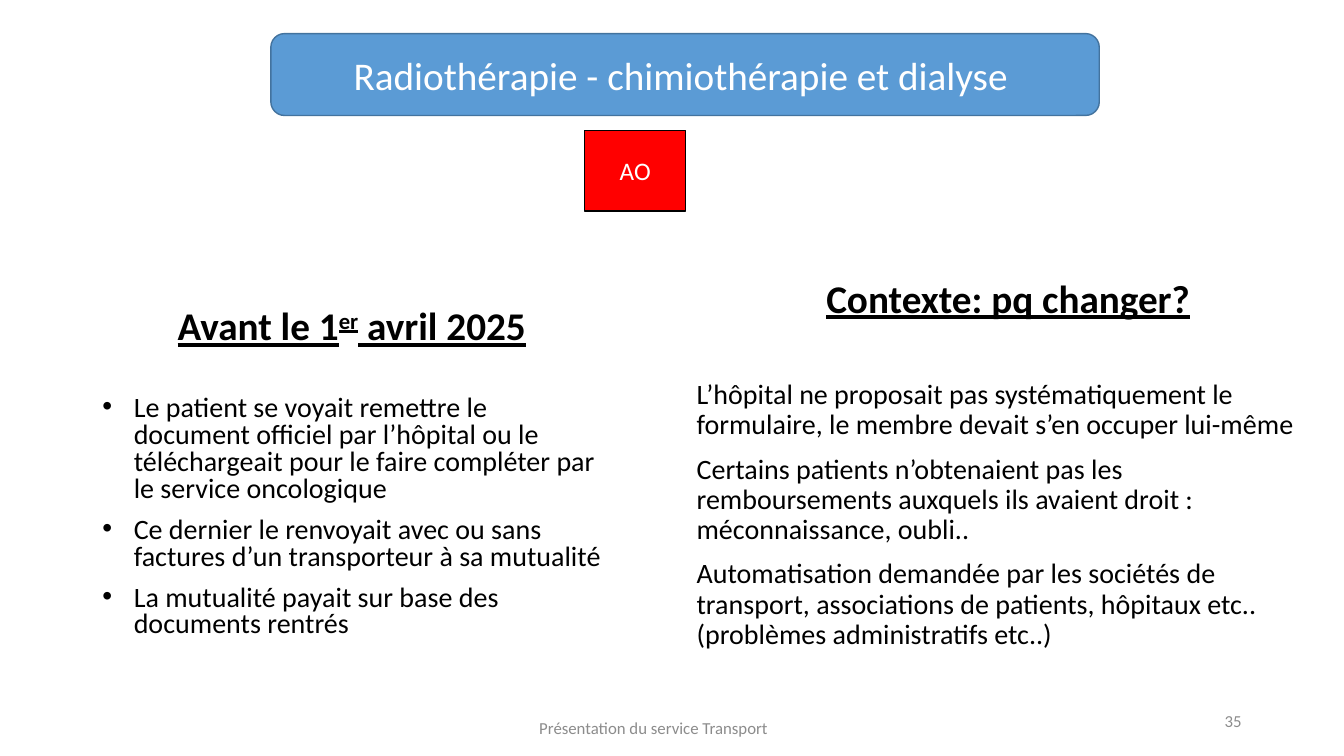
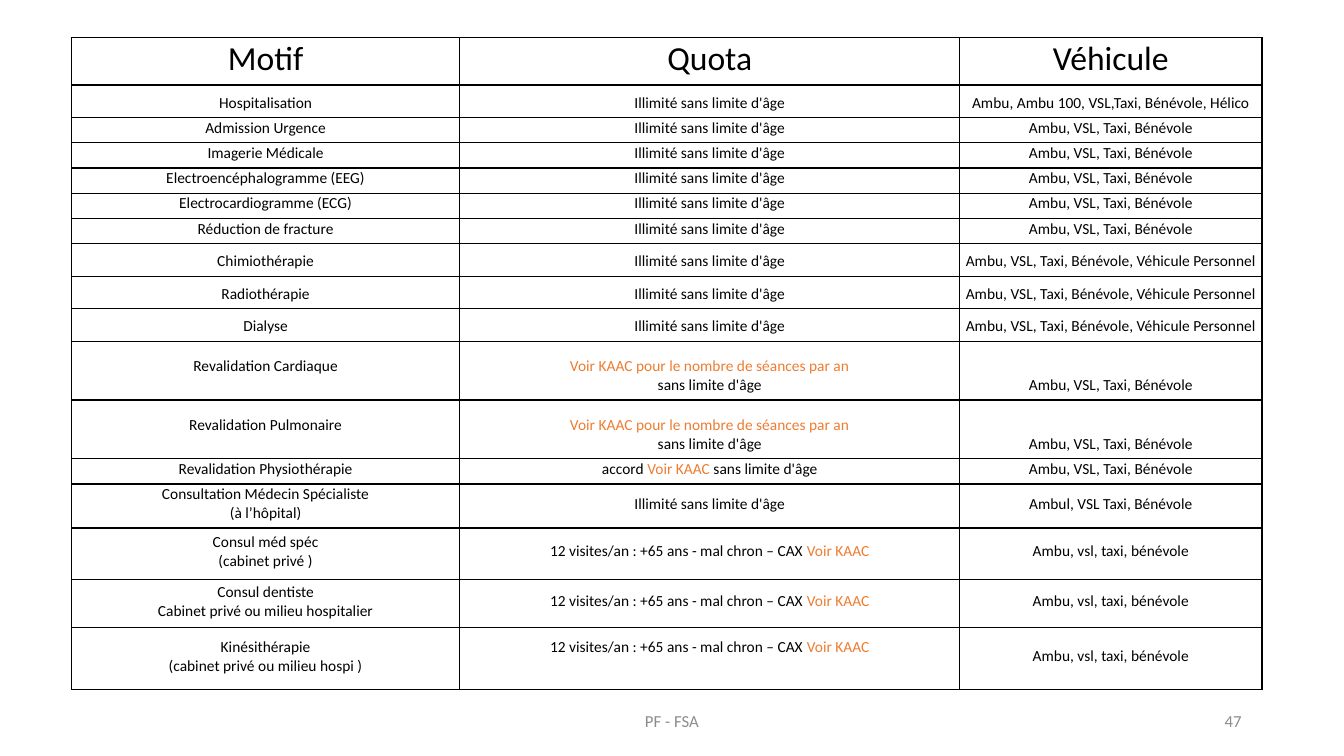
from dataclasses import dataclass
from typing import Sequence

from lxml.etree import SubElement
from pptx import Presentation
from pptx.dml.color import RGBColor
from pptx.enum.shapes import MSO_SHAPE
from pptx.enum.text import MSO_ANCHOR, PP_ALIGN
from pptx.oxml import parse_xml
from pptx.oxml.ns import nsdecls, qn
from pptx.slide import Slide
from pptx.table import _Cell
from pptx.text.text import TextFrame, _Paragraph
from pptx.util import Emu, Pt

EMU_PER_PX = 9525
FONT = "Calibri"
BLACK = "000000"
WHITE = "FFFFFF"
GREY = "8C8C8C"
BLUE = "5B9BD5"
DARK_BLUE = "43739E"
RED = "FF0000"
ORANGE = "ED7D31"
COLUMN_WIDTHS = (370, 476, 288)
CELL_MARGINS = (1, 1, 1, 5)
CELL_LIFT = 18


@dataclass(frozen=True)
class Box:
    """Position and size in px."""
    left: int
    top: int
    width: int
    height: int

    def emu(self) -> tuple[Emu, Emu, Emu, Emu]:
        """Return the four lengths in EMU."""
        return px(self.left), px(self.top), px(self.width), px(self.height)


@dataclass(frozen=True)
class Span:
    """Piece of text with one format."""
    text: str
    color: str = BLACK
    superscript: bool = False


@dataclass(frozen=True)
class Line:
    """Paragraph with its format."""
    spans: tuple[Span, ...]
    size: int
    align: PP_ALIGN = PP_ALIGN.CENTER
    space_before: int = 0
    spacing: float = 1.0
    heading: bool = False
    bullet: bool = False


@dataclass(frozen=True)
class Column:
    """Heading and points of one side of the comparison."""
    box: Box
    top_margin: int
    spacing: float
    heading: tuple[Span, ...]
    heading_gap: int
    bullet: bool
    points: tuple[str, ...]


@dataclass(frozen=True)
class Banner:
    """Filled shape with a centred label."""
    box: Box
    outline: MSO_SHAPE
    fill: str
    border: str
    label: str
    size: int


@dataclass(frozen=True)
class Footer:
    """Footer text and slide number."""
    box: Box
    label: str
    number: str


@dataclass(frozen=True)
class Transport:
    """Table row: a cell is a tuple of lines, a line a tuple of spans."""
    motif: tuple[tuple[Span, ...], ...]
    quota: tuple[tuple[Span, ...], ...]
    vehicles: str
    height: int
    anchor: MSO_ANCHOR = MSO_ANCHOR.BOTTOM
    lifted: tuple[int, ...] = ()
    size: int = 11


def px(length: int) -> Emu:
    """Convert px to EMU."""
    return Emu(length * EMU_PER_PX)


def rgb(color: str) -> RGBColor:
    """Convert a hex string to a colour."""
    return RGBColor.from_string(color)


def add_bullet(paragraph: _Paragraph) -> None:
    """Give a paragraph a hanging round bullet."""
    properties = paragraph._p.get_or_add_pPr()
    properties.set("marL", str(px(30)))
    properties.set("indent", str(px(-30)))
    SubElement(properties, qn("a:buFont")).set("typeface", "Arial")
    SubElement(properties, qn("a:buChar")).set("char", "•")


def write(frame: TextFrame, lines: Sequence[Line]) -> None:
    """Fill a text frame with formatted paragraphs."""
    frame.word_wrap = True
    for index, line in enumerate(lines):
        paragraph = frame.add_paragraph() if index else frame.paragraphs[0]
        if line.bullet:
            add_bullet(paragraph)
        paragraph.alignment = line.align
        paragraph.line_spacing = line.spacing
        paragraph.space_before = Pt(line.space_before)
        for span in line.spans:
            run = paragraph.add_run()
            run.text = span.text
            run.font.name = FONT
            run.font.size = Pt(line.size)
            run.font.color.rgb = rgb(span.color)
            run.font.bold = line.heading
            run.font.underline = line.heading
            if span.superscript:
                run._r.get_or_add_rPr().set("baseline", "30000")


def add_text(slide: Slide, box: Box, lines: Sequence[Line],
             anchor: MSO_ANCHOR = MSO_ANCHOR.MIDDLE) -> TextFrame:
    """Add a text box."""
    frame = slide.shapes.add_textbox(*box.emu()).text_frame
    frame.vertical_anchor = anchor
    write(frame, lines)
    return frame


def add_footer(slide: Slide, footer: Footer) -> None:
    """Add the footer text and the slide number."""
    add_text(slide, footer.box, [Line((Span(footer.label, GREY),), 12)])
    number = Line((Span(footer.number, GREY),), 12, PP_ALIGN.RIGHT)
    add_text(slide, Box(904, 667, 288, 38), [number])


def add_banner(slide: Slide, banner: Banner) -> None:
    """Add a labelled shape."""
    shape = slide.shapes.add_shape(banner.outline, *banner.box.emu())
    shape.shadow.inherit = False
    shape.fill.solid()
    shape.fill.fore_color.rgb = rgb(banner.fill)
    shape.line.color.rgb = rgb(banner.border)
    shape.line.width = Pt(1)
    shape.text_frame.vertical_anchor = MSO_ANCHOR.MIDDLE
    write(shape.text_frame, [Line((Span(banner.label, WHITE),), banner.size)])


def add_column(slide: Slide, column: Column) -> None:
    """Add a heading followed by its points."""
    heading = Line(column.heading, 28, spacing=column.spacing, heading=True)
    points = [
        Line((Span(point),), 20, PP_ALIGN.LEFT, 10 if index else column.heading_gap,
             column.spacing, bullet=column.bullet)
        for index, point in enumerate(column.points)
    ]
    frame = add_text(slide, column.box, [heading, *points], MSO_ANCHOR.TOP)
    frame.margin_top = px(column.top_margin)


def add_borders(cell: _Cell) -> None:
    """Draw a thin black line on each side of a cell."""
    properties = cell._tc.get_or_add_tcPr()
    for position, side in enumerate(("lnL", "lnR", "lnT", "lnB")):
        properties.insert(position, parse_xml(
            f'<a:{side} {nsdecls("a")} w="{Pt(1)}"><a:solidFill>'
            f'<a:srgbClr val="{BLACK}"/></a:solidFill></a:{side}>'))


def add_transport_table(slide: Slide, transports: Sequence[Transport]) -> None:
    """Add the table of quotas and vehicles."""
    box = Box(68, 36, sum(COLUMN_WIDTHS), sum(item.height for item in transports))
    table = slide.shapes.add_table(
        len(transports), len(COLUMN_WIDTHS), *box.emu()).table
    table.first_row = False
    table.horz_banding = False
    for column, width in zip(table.columns, COLUMN_WIDTHS):
        column.width = px(width)
    for row, item in zip(table.rows, transports):
        row.height = px(item.height)
        contents = (item.motif, item.quota, plain(item.vehicles))
        for index, (cell, content) in enumerate(zip(row.cells, contents)):
            left, top, right, bottom = CELL_MARGINS
            cell.margin_left, cell.margin_top = px(left), px(top)
            cell.margin_right = px(right)
            cell.margin_bottom = px(bottom + CELL_LIFT * (index in item.lifted))
            cell.vertical_anchor = item.anchor
            cell.fill.background()
            add_borders(cell)
            write(cell.text_frame, [Line(spans, item.size) for spans in content])


def plain(*texts: str) -> tuple[tuple[Span, ...], ...]:
    """Make one black line of each text."""
    return tuple((Span(text),) for text in texts)


UNLIMITED = plain("Illimité sans limite d'âge")
SESSIONS = ((Span("Voir KAAC pour le nombre de séances par an", ORANGE),),
            (Span("sans limite d'âge"),))
AGREEMENT = ((Span("accord "), Span("Voir KAAC ", ORANGE),
              Span("sans limite d'âge")),)
VISITS = ((Span("12 visites/an : +65 ans - mal chron – CAX "),
           Span("Voir KAAC", ORANGE)),)
USUAL = "Ambu, VSL, Taxi, Bénévole"
WITH_OWN_CAR = f"{USUAL}, Véhicule Personnel"
PRIVATE = "Ambu, vsl, taxi, bénévole"
MIDDLE = MSO_ANCHOR.MIDDLE

TRANSPORTS = (
    Transport(plain("Motif"), plain("Quota"), "Véhicule", 45, size=24),
    Transport(plain("Hospitalisation"), UNLIMITED,
              "Ambu, Ambu 100, VSL,Taxi, Bénévole, Hélico", 31),
    Transport(plain("Admission Urgence"), UNLIMITED, USUAL, 24, MIDDLE),
    *(Transport(plain(motif), UNLIMITED, USUAL, 24) for motif in (
        "Imagerie Médicale", "Electroencéphalogramme (EEG)",
        "Electrocardiogramme (ECG)", "Réduction de fracture")),
    *(Transport(plain(motif), UNLIMITED, WITH_OWN_CAR, 31) for motif in (
        "Chimiothérapie", "Radiothérapie", "Dialyse")),
    *(Transport(plain(motif), SESSIONS, USUAL, 56, lifted=(0,)) for motif in (
        "Revalidation Cardiaque", "Revalidation Pulmonaire")),
    Transport(plain("Revalidation Physiothérapie"), AGREEMENT, USUAL, 24),
    Transport(plain("Consultation Médecin Spécialiste", "(à l’hôpital)"),
              UNLIMITED, "Ambul, VSL Taxi, Bénévole", 42, MIDDLE),
    Transport(plain("Consul méd spéc", "(cabinet privé )"),
              VISITS, PRIVATE, 49, MIDDLE),
    Transport(plain("Consul dentiste", "Cabinet privé ou milieu hospitalier"),
              VISITS, PRIVATE, 46, MIDDLE),
    Transport(plain("Kinésithérapie", "(cabinet privé ou milieu hospi )"),
              VISITS, PRIVATE, 59, MIDDLE, lifted=(1,)),
)

BANNERS = (
    Banner(Box(258, 32, 789, 78), MSO_SHAPE.ROUNDED_RECTANGLE, BLUE, DARK_BLUE,
           "Radiothérapie - chimiothérapie et dialyse ", 28),
    Banner(Box(557, 124, 96, 77), MSO_SHAPE.RECTANGLE, RED, BLACK, "AO", 18),
)

COLUMNS = (
    Column(Box(88, 242, 494, 382), 54, 0.8,
           (Span("Avant le 1"), Span("er", superscript=True), Span(" avril 2025")),
           34, True, (
               "Le patient se voyait remettre le document officiel par l’hôpital ou "
               "le téléchargeait pour le faire compléter par le service oncologique",
               "Ce dernier le renvoyait avec ou sans factures d’un transporteur à "
               "sa mutualité",
               "La mutualité payait sur base des documents rentrés")),
    Column(Box(654, 241, 612, 407), 25, 0.9, (Span("Contexte: pq changer?"),),
           42, False, (
               "L’hôpital ne proposait pas systématiquement le formulaire, le "
               "membre devait s’en occuper lui-même",
               "Certains patients n’obtenaient pas les remboursements auxquels "
               "ils avaient droit : méconnaissance, oubli..",
               "Automatisation demandée par les sociétés de transport, associations "
               "de patients, hôpitaux etc..(problèmes administratifs etc..)")),
)


def main() -> None:
    """Build and save the two slides."""
    deck = Presentation()
    deck.slide_width, deck.slide_height = px(1280), px(720)
    blank = deck.slide_layouts[6]

    therapy = deck.slides.add_slide(blank)
    for column in COLUMNS:
        add_column(therapy, column)
    for banner in BANNERS:
        add_banner(therapy, banner)
    add_footer(therapy, Footer(Box(419, 674, 407, 38),
                               "Présentation du service Transport", "35"))

    quotas = deck.slides.add_slide(blank)
    add_transport_table(quotas, TRANSPORTS)
    add_footer(quotas, Footer(Box(424, 667, 432, 38), "PF - FSA", "47"))
    deck.save("out.pptx")


if __name__ == "__main__":
    main()
